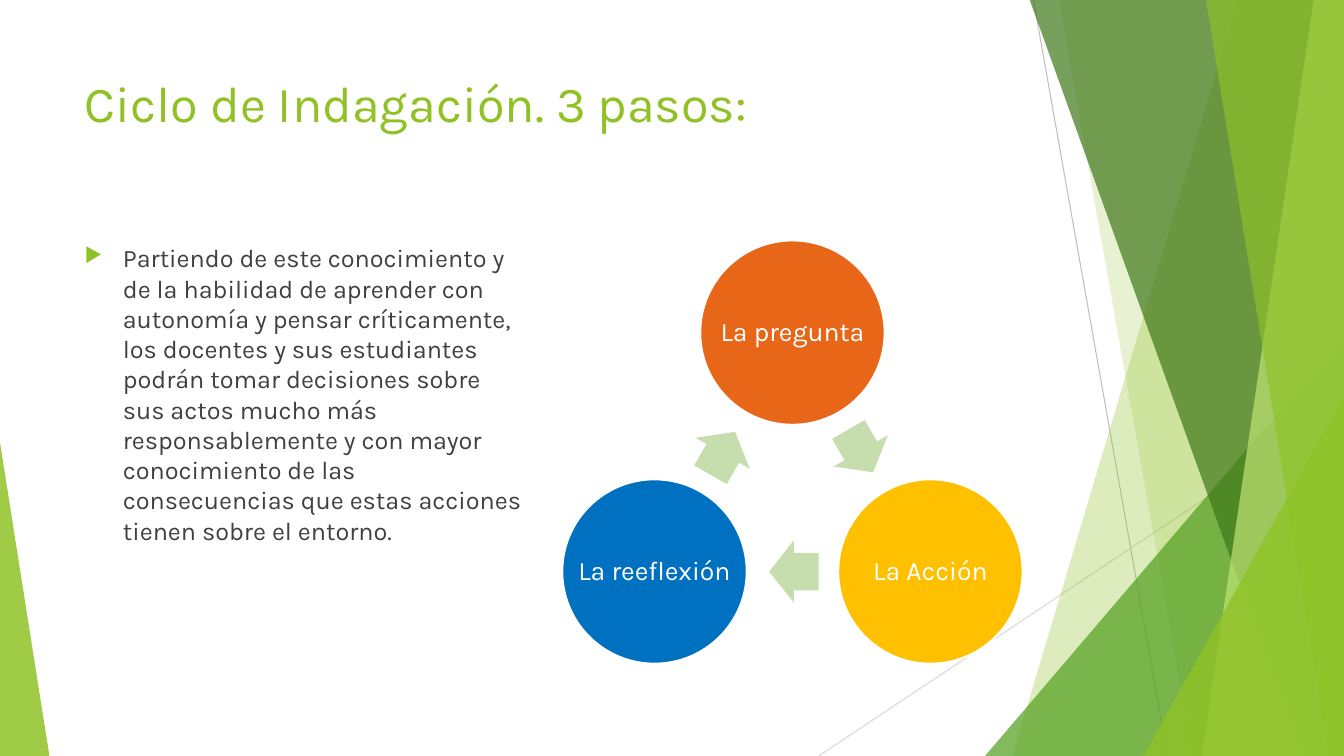
from math import cos, radians, sin

from lxml.etree import SubElement
from pptx import Presentation
from pptx.dml.color import RGBColor
from pptx.enum.shapes import MSO_CONNECTOR as Connector, MSO_SHAPE as Shape
from pptx.enum.text import MSO_ANCHOR as Anchor, MSO_AUTO_SIZE as AutoSize, PP_ALIGN as Align
from pptx.oxml.ns import qn
from pptx.util import Inches, Pt

WIDTH, HEIGHT = 13.33, 7.5
GREEN = "90C226"
CYCLE_CENTER = (7.86, 4.88)
CIRCLE_ORBIT, ARROW_ORBIT = 1.58, 0.79
CIRCLE_SIZE = 1.83
ARROW_SIZE = (0.49, 0.62)

RAYS = [((10.25, 0), (11.58, HEIGHT), "BFBFBF"), ((WIDTH, 4.03), (8.12, HEIGHT), "D9D9D9")]
BACK_BANDS = [(12.28, 10.04, GREEN, 30), (10.5, 11.83, GREEN, 20)]
FRONT_BANDS = [(10.21, 12.91, "3F7819", 70), (13.03, 11.92, "C0E474", 70), (11.96, 13.18, GREEN, 65)]
STEPS = [("La pregunta", "E76618"), ("La Acción", "FFC000"), ("La reeflexión", "0070C0")]
BODY = (
    "Partiendo de este conocimiento y de la habilidad de aprender con autonomía y pensar "
    "críticamente, los docentes y sus estudiantes podrán tomar decisiones sobre sus actos "
    "mucho más responsablemente y con mayor conocimiento de las consecuencias que estas "
    "acciones tienen sobre el entorno."
)


def color(hex_code):
    return RGBColor.from_string(hex_code)


def orbit_point(radius, angle):
    x, y = CYCLE_CENTER
    return x + radius * sin(radians(angle)), y - radius * cos(radians(angle))


class SlideBuilder:
    """Draws styled elements on the current slide."""

    font_name = "Karla"

    def __init__(self, slide):
        self.slide = slide

    def paint(self, shape, fill, opacity=100):
        shape.shadow.inherit = False
        shape.line.fill.background()
        shape.fill.solid()
        shape.fill.fore_color.rgb = color(fill)
        if opacity < 100:
            fill_color = shape._element.spPr.find(qn("a:solidFill"))[0]
            SubElement(fill_color, qn("a:alpha"), val=str(opacity * 1000))

    def set_text(self, frame, text, size, text_color):
        frame.text = text
        paragraph = frame.paragraphs[0]
        paragraph.font.name = self.font_name
        paragraph.font.size = Pt(size)
        paragraph.font.color.rgb = color(text_color)
        return paragraph

    def place(self, shape, left, top, width, height):
        shape.left, shape.top = Inches(left), Inches(top)
        shape.width, shape.height = Inches(width), Inches(height)

    def title(self, text, *box):
        title = self.slide.shapes.title
        self.place(title, *box)
        frame = title.text_frame
        frame.word_wrap = True
        frame.auto_size = AutoSize.NONE
        frame.vertical_anchor = Anchor.TOP
        self.set_text(frame, text, 36, GREEN).alignment = Align.LEFT

    def bullet_text(self, text, *box):
        frame = self.slide.shapes.add_textbox(*map(Inches, box)).text_frame
        frame.word_wrap = True
        paragraph = self.set_text(frame, text, 18, "404040")
        paragraph.space_before = Pt(10)
        properties = paragraph._p.get_or_add_pPr()
        properties.set("marL", str(Inches(0.38)))
        properties.set("indent", str(-Inches(0.38)))
        bullet_color = properties.makeelement(qn("a:buClr"))
        SubElement(bullet_color, qn("a:srgbClr"), val=GREEN)
        bullet_size = properties.makeelement(qn("a:buSzPct"), val="80000")
        bullet = properties.makeelement(qn("a:buChar"), char="▶")
        default_font = properties.find(qn("a:defRPr"))
        for element in (bullet_color, bullet_size, bullet):
            default_font.addprevious(element)

    def line(self, start, end, line_color):
        connector = self.slide.shapes.add_connector(Connector.STRAIGHT, *map(Inches, start + end))
        connector.line.color.rgb = color(line_color)
        connector.line.width = Pt(0.75)
        SubElement(connector._element.spPr, qn("a:effectLst"))

    def band(self, top_x, bottom_x, fill, opacity):
        corners = [(top_x, -0.01), (WIDTH, -0.01), (WIDTH, HEIGHT), (bottom_x, HEIGHT)]
        points = [(Inches(x), Inches(y)) for x, y in corners]
        builder = self.slide.shapes.build_freeform(*points[0])
        builder.add_line_segments(points[1:], close=True)
        self.paint(builder.convert_to_shape(), fill, opacity)

    def triangle(self, left, top, width, apex, fill, opacity):
        box = (left, top, width, HEIGHT - top)
        shape = self.slide.shapes.add_shape(Shape.ISOSCELES_TRIANGLE, *map(Inches, box))
        shape.adjustments[0] = apex
        self.paint(shape, fill, opacity)

    def centered(self, kind, center, width, height, fill):
        box = (center[0] - width / 2, center[1] - height / 2, width, height)
        shape = self.slide.shapes.add_shape(kind, *map(Inches, box))
        self.paint(shape, fill)
        return shape

    def circle(self, text, center, fill):
        shape = self.centered(Shape.OVAL, center, CIRCLE_SIZE, CIRCLE_SIZE, fill)
        shape.line.color.rgb = color("FFFFFF")
        shape.line.width = Pt(1.5)
        frame = shape.text_frame
        frame.word_wrap = False
        frame.vertical_anchor = Anchor.MIDDLE
        frame.margin_left = frame.margin_right = Inches(0.03)
        frame.margin_top = frame.margin_bottom = Inches(0.03)
        paragraph = self.set_text(frame, text, 19, "FFFFFF")
        paragraph.alignment = Align.CENTER
        paragraph.line_spacing = 0.9

    def arrow(self, center, rotation):
        shape = self.centered(Shape.RIGHT_ARROW, center, *ARROW_SIZE, "C6DDAD")
        shape.adjustments[0] = 0.6
        shape.adjustments[1] = 0.5
        shape.rotation = rotation


def main():
    presentation = Presentation()
    presentation.slide_width, presentation.slide_height = Inches(WIDTH), Inches(HEIGHT)
    builder = SlideBuilder(presentation.slides.add_slide(presentation.slide_layouts[5]))

    for ray in RAYS:
        builder.line(*ray)
    for band in BACK_BANDS:
        builder.band(*band)
    builder.triangle(9.77, 3.33, 3.56, 1, "54A021", 72)
    for band in FRONT_BANDS:
        builder.band(*band)
    builder.triangle(11.34, 3.93, 1.99, 1, GREEN, 80)
    builder.triangle(0, 4.39, 0.49, 0, GREEN, 85)

    builder.title("Ciclo de Indagación. 3 pasos:", 0.74, 0.67, 9.4, 1.44)
    builder.bullet_text(BODY, 0.74, 2.36, 4.58, 4.24)

    for index, (step, fill) in enumerate(STEPS):
        angle = index * 360 / len(STEPS)
        builder.circle(step, orbit_point(CIRCLE_ORBIT, angle), fill)
        builder.arrow(orbit_point(ARROW_ORBIT, angle + 59), angle + 60)

    presentation.save("out.pptx")


if __name__ == "__main__":
    main()
